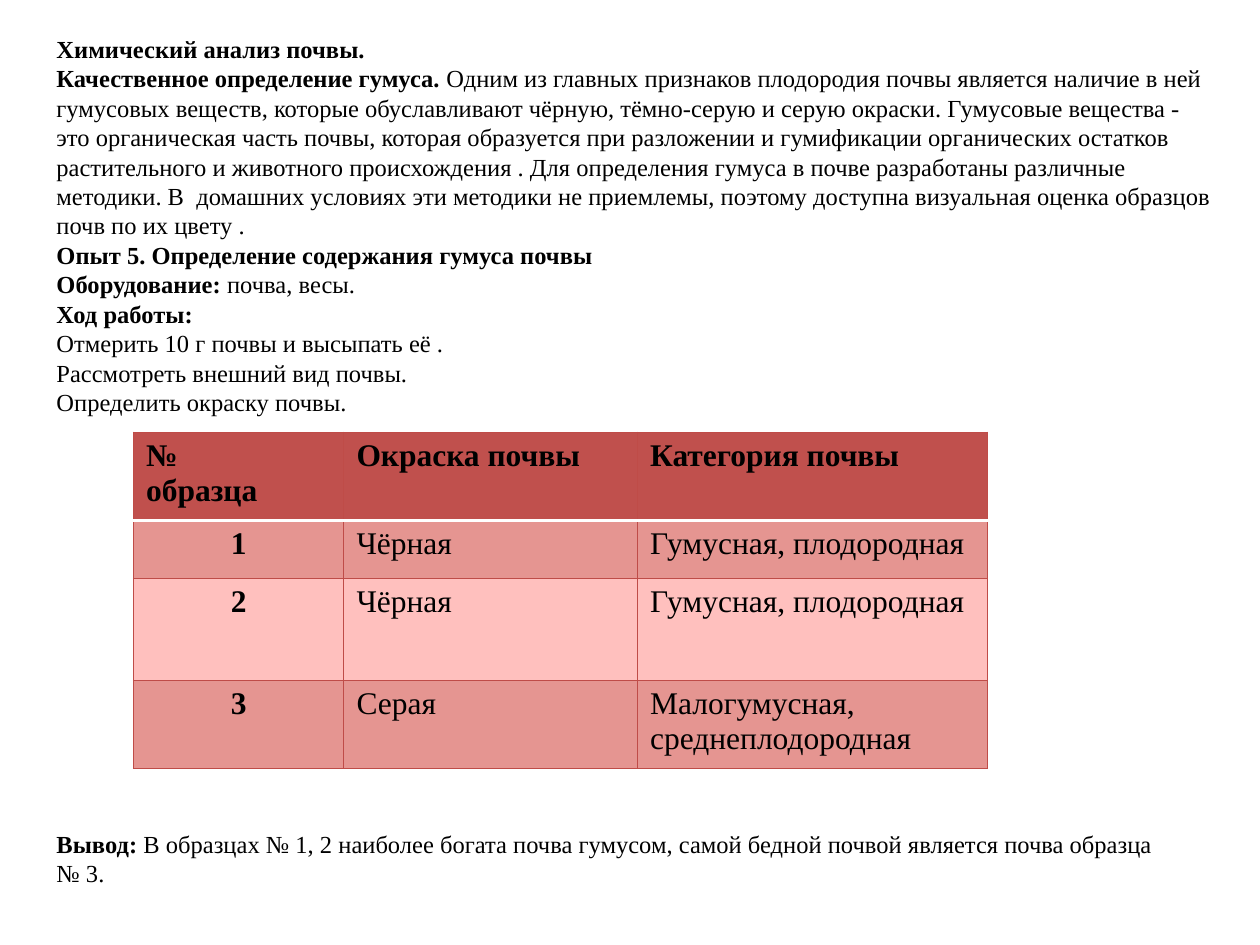
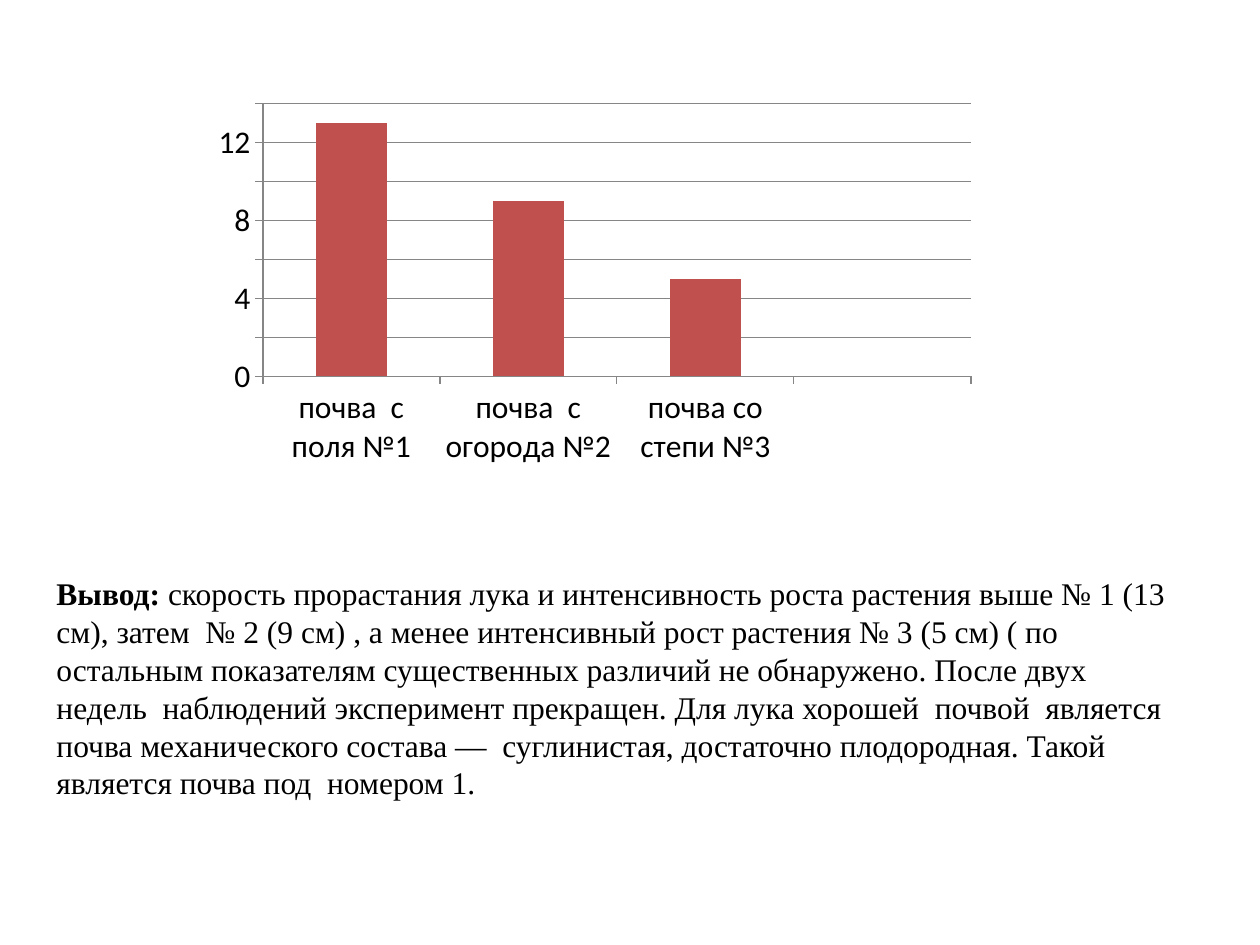
from lxml.etree import SubElement
from pptx import Presentation
from pptx.chart.data import CategoryChartData
from pptx.dml.color import RGBColor
from pptx.enum.chart import XL_CHART_TYPE, XL_TICK_MARK
from pptx.enum.text import PP_ALIGN
from pptx.oxml.ns import qn
from pptx.util import Inches, Pt

COLOURS = {
    "text": "000000",
    "accent": "C0504D",
    "border": "BF4C48",
    "odd_row": "E59591",
    "even_row": "FFC0BE",
    "header_rule": "FFFFFF",
    "axis": "868686",
}
SERIF, SANS = "Times New Roman", "Calibri"
TEXT_LEFT = 0.35

# Paragraphs are lists of (text, bold) spans
SOIL_ANALYSIS = [
    [("Химический анализ почвы.", True)],
    [("Качественное определение гумуса. ", True),
     ("Одним из главных признаков плодородия почвы является наличие в ней гумусовых "
      "веществ, которые обуславливают чёрную, тёмно-серую и серую окраски. Гумусовые "
      "вещества - это органическая часть почвы, которая образуется при разложении и "
      "гумификации органических остатков растительного и животного происхождения . "
      "Для определения гумуса в почве разработаны различные методики. В  домашних "
      "условиях эти методики не приемлемы, поэтому доступна визуальная оценка "
      "образцов почв по их цвету .", False)],
    [("Опыт 5. Определение содержания гумуса почвы", True)],
    [("Оборудование: ", True), ("почва, весы.", False)],
    [("Ход работы:", True)],
    [("Отмерить 10 г почвы и высыпать её .", False)],
    [("Рассмотреть внешний вид почвы.", False)],
    [("Определить окраску почвы.", False)],
]
HUMUS_CONCLUSION = [
    [("Вывод: ", True),
     ("В образцах № 1, 2 наиболее богата почва гумусом, самой бедной почвой является "
      "почва образца", False)],
    [("№ 3.", False)],
]
GROWTH_CONCLUSION = [
    [("Вывод: ", True),
     ("скорость прорастания лука и интенсивность роста растения выше № 1 (13 см), "
      "затем  № 2 (9 см) , а менее интенсивный рост растения № 3 (5 см) ( по остальным "
      "показателям существенных различий не обнаружено. После двух недель  наблюдений "
      "эксперимент прекращен. Для лука хорошей  почвой  является почва механического "
      "состава —  суглинистая, достаточно плодородная. Такой является почва под  "
      "номером 1.", False)],
]
SAMPLES = [
    ("№\nобразца", "Окраска почвы", "Категория почвы"),
    ("1", "Чёрная", "Гумусная, плодородная"),
    ("2", "Чёрная", "Гумусная, плодородная"),
    ("3", "Серая", "Малогумусная, среднеплодородная"),
]
COLUMN_WIDTHS = [1.67, 2.33, 2.78]
ROW_HEIGHTS = [0.7, 0.46, 0.81, 0.7]
# The last category is an empty slot
GROWTH = {"почва  с поля №1": 13, "почва  с огорода №2": 9, "почва со степи №3": 5, "": None}


def colour(name):
    return RGBColor.from_string(COLOURS[name])


def style_font(font, size, name=SERIF, bold=False):
    for key, value in {"size": Pt(size), "name": name, "bold": bold}.items():
        setattr(font, key, value)
    font.color.rgb = colour("text")


def write_paragraphs(frame, paragraphs, size):
    for index, spans in enumerate(paragraphs):
        para = frame.add_paragraph() if index else frame.paragraphs[0]
        for text, bold in spans:
            span = para.add_run()
            span.text = text
            style_font(span.font, size, bold=bold)


def add_text(page, top, width, height, paragraphs, size):
    box = page.shapes.add_textbox(*map(Inches, (TEXT_LEFT, top, width, height)))
    box.text_frame.word_wrap = True
    write_paragraphs(box.text_frame, paragraphs, size)


def set_border(cell, side, name, width):
    line = SubElement(cell._tc.get_or_add_tcPr(), qn(f"a:ln{side}"), w=str(Pt(width)))
    fill = SubElement(line, qn("a:solidFill"))
    SubElement(fill, qn("a:srgbClr"), val=COLOURS[name])


def fill_cell(cell, text, row, column):
    header = row == 0
    bold = header or column == 0
    write_paragraphs(cell.text_frame, [[(part, bold)] for part in text.split("\n")], 18)
    if column == 0 and not header:
        cell.text_frame.paragraphs[0].alignment = PP_ALIGN.CENTER
    # Borders come before the fill in the cell properties
    for side in "LRTB":
        on_rule = (side == "B" and header) or (side == "T" and row == 1)
        set_border(cell, side, *(("header_rule", 2) if on_rule else ("border", 0.75)))
    cell.fill.solid()
    band = "odd_row" if row % 2 else "even_row"
    cell.fill.fore_color.rgb = colour("accent" if header else band)


def add_sample_table(page, left, top):
    size = (sum(COLUMN_WIDTHS), sum(ROW_HEIGHTS))
    table = page.shapes.add_table(len(ROW_HEIGHTS), len(COLUMN_WIDTHS),
                                  *map(Inches, (left, top, *size))).table
    for column, width in zip(table.columns, COLUMN_WIDTHS):
        column.width = Inches(width)
    for row, height in zip(table.rows, ROW_HEIGHTS):
        row.height = Inches(height)
    for row, texts in enumerate(SAMPLES):
        for column, text in enumerate(texts):
            fill_cell(table.cell(row, column), text, row, column)


def style_line(line):
    line.color.rgb = colour("axis")
    line.width = Pt(0.75)


def add_growth_chart(page, left, top, width, height):
    data = CategoryChartData()
    data.categories = list(GROWTH)
    data.add_series("Series 1", list(GROWTH.values()))
    chart = page.shapes.add_chart(XL_CHART_TYPE.COLUMN_CLUSTERED,
                                  *map(Inches, (left, top, width, height)), data).chart
    chart.has_legend = False
    chart.has_title = False
    style_font(chart.font, 18, SANS)

    # Columns
    plot = chart.plots[0]
    plot.gap_width = 150
    plot.vary_by_categories = False
    columns = plot.series[0].format.fill
    columns.solid()
    columns.fore_color.rgb = colour("accent")

    # Axes and grid
    for axis in (chart.category_axis, chart.value_axis):
        axis.major_tick_mark = XL_TICK_MARK.OUTSIDE
        style_line(axis.format.line)
    limits = {"minimum_scale": 0, "maximum_scale": 14, "major_unit": 2}
    for key, value in limits.items():
        setattr(chart.value_axis, key, value)
    style_line(chart.value_axis.major_gridlines.format.line)


def main():
    deck = Presentation()
    deck.slide_width, deck.slide_height = Inches(10), Inches(7.5)
    blank = deck.slide_layouts[6]

    # Humus content of the soil samples
    page = deck.slides.add_slide(blank)
    add_text(page, 0.22, 9.37, 3.15, SOIL_ANALYSIS, 14)
    add_sample_table(page, 1.06, 3.43)
    add_text(page, 6.53, 9.37, 0.57, HUMUS_CONCLUSION, 14)

    # Onion growth
    page = deck.slides.add_slide(blank)
    add_growth_chart(page, 1.61, 0.76, 6.22, 2.99)
    add_text(page, 4.51, 9.13, 1.9, GROWTH_CONCLUSION, 18)

    deck.save("out.pptx")


if __name__ == "__main__":
    main()
